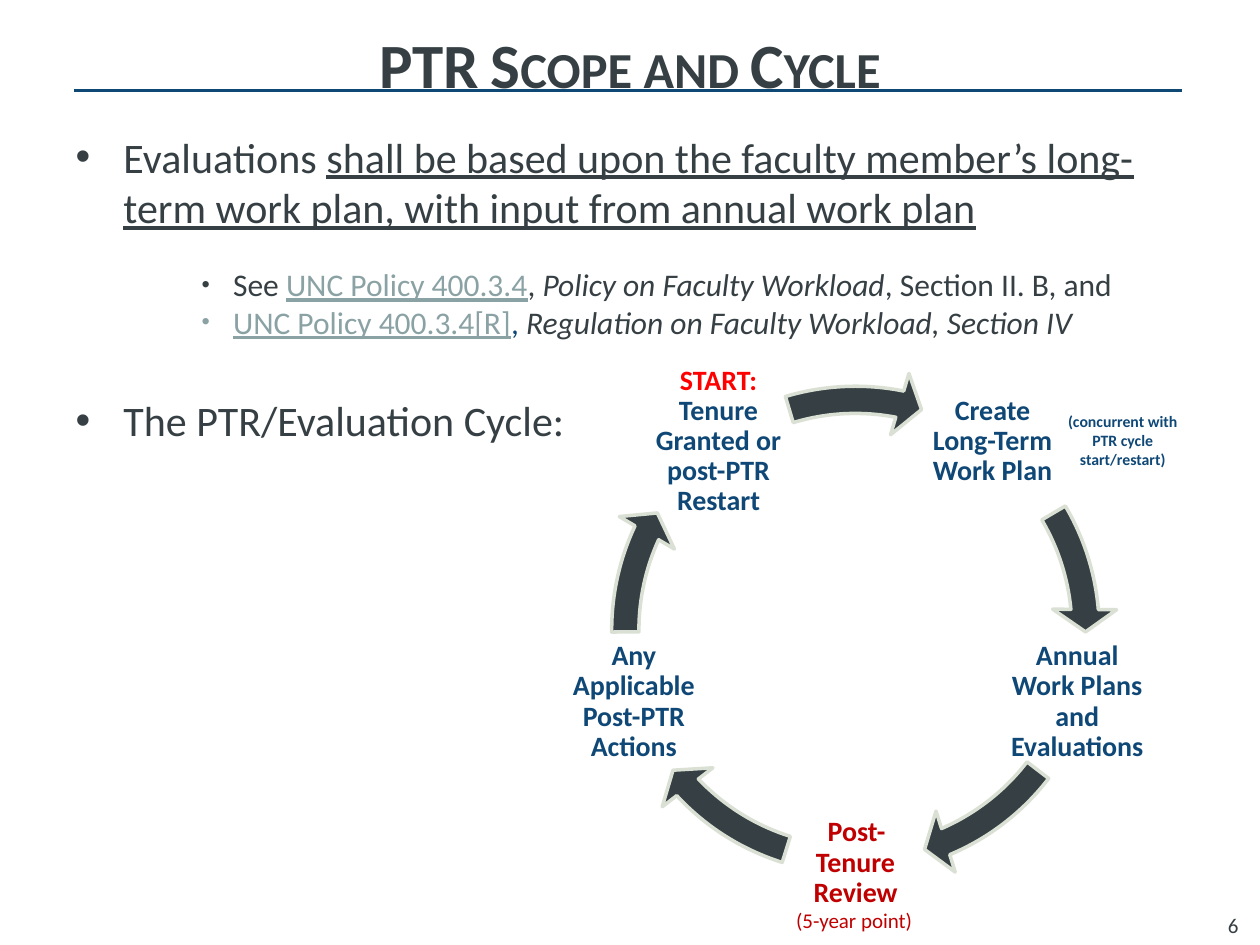
from math import cos, radians, sin

from lxml.etree import SubElement
from pptx import Presentation
from pptx.dml.color import RGBColor
from pptx.enum.shapes import MSO_CONNECTOR as Connector, MSO_SHAPE as Shape
from pptx.enum.text import MSO_ANCHOR as Anchor, MSO_AUTO_SIZE as AutoSize, PP_ALIGN as Align
from pptx.oxml.ns import qn
from pptx.util import Inches, Pt

SLATE, NAVY, RED, LINK = "364044", "0F4876", "C00000", "8BA2A5"
CENTER_X, CENTER_Y, RADIUS = 6.79, 5, 1.85
RING_SIZE, STEP_SIZE = 4.16, 1.11
FIRST_ANGLE = -126

STEPS = [
    [("START: ", "FF0000"), ("Tenure Granted or post-PTR Restart", NAVY)],
    [("Create Long-Term Work Plan", NAVY)],
    [("Annual Work Plans and Evaluations", NAVY)],
    [("Post-Tenure Review", RED)],
    [("Any Applicable Post-PTR Actions", NAVY)],
]
ARROW_ANGLES = [(253.3, 281.1), (329.43, 354.89), (37.55, 66.92),
                (107.49, 136.85), (179.51, 204.97)]


def color(hex_value):
    """Turn a hex string into a colour."""
    return RGBColor.from_string(hex_value)


def set_font(font, size, hex_value, bold=None):
    """Set the common font properties."""
    font.name = "Calibri"
    font.size = Pt(size)
    font.bold = bold
    font.color.rgb = color(hex_value)


def place(item, left, top, width, height):
    """Move and size a shape, in inches."""
    item.left, item.top = Inches(left), Inches(top)
    item.width, item.height = Inches(width), Inches(height)


def add_title(slide):
    """Fill the title and draw the rule under it."""
    title = slide.shapes.title
    place(title, 0.5, 0.1, 9, 0.81)
    heading = title.text_frame.paragraphs[0]
    heading.alignment = Align.CENTER
    run = heading.add_run()
    run.text = "PTR Scope and Cycle"
    set_font(run.font, 36, SLATE, True)
    run.font._element.set("cap", "small")

    rule = slide.shapes.add_connector(
        Connector.STRAIGHT, Inches(0.59), Inches(0.72), Inches(9.38), Inches(0.72))
    rule.line.color.rgb = color("0E4875")
    rule.line.width = Pt(2)
    SubElement(rule._element.spPr, qn("a:effectLst"))


def add_bullet(paragraph, parts, level, size, indent, hanging, before=0, after=0, percent=100):
    """Write one bulleted paragraph from (text, colour, underline, italic) parts."""
    properties = paragraph._p.get_or_add_pPr()
    properties.set("marL", str(Inches(indent)))
    properties.set("indent", str(-Inches(hanging)))
    SubElement(properties, qn("a:buSzPct"), val=str(percent * 1000))
    SubElement(properties, qn("a:buFont"), typeface="Arial")
    SubElement(properties, qn("a:buChar"), char="•")
    paragraph.level = level
    paragraph.space_before, paragraph.space_after = Pt(before), Pt(after)
    for text, hex_value, underline, italic in parts:
        run = paragraph.add_run()
        run.text = text
        set_font(run.font, size, hex_value)
        run.font.underline = underline
        run.font.italic = italic


def add_body(slide):
    """Fill the body with the evaluation rules and their sources."""
    body = slide.placeholders[1]
    place(body, 0.5, 0.99, 9, 3.35)
    frame = body.text_frame
    frame.auto_size = AutoSize.NONE
    main_style = dict(level=0, size=24, indent=0.38, hanging=0.38)
    source_style = dict(level=2, size=18, indent=1.25, hanging=0.25, percent=75)
    add_bullet(frame.paragraphs[0], [
        ("Evaluations ", SLATE, False, False),
        ("shall be based upon the faculty member’s long-term work plan, "
         "with input from annual work plan", SLATE, True, False),
    ], **main_style)
    add_bullet(frame.add_paragraph(), [
        ("See ", SLATE, False, False),
        ("UNC Policy 400.3.4", LINK, True, False),
        (", ", SLATE, False, False),
        ("Policy on Faculty Workload", SLATE, False, True),
        (", Section II. B, and", SLATE, False, False),
    ], before=19, **source_style)
    add_bullet(frame.add_paragraph(), [
        ("UNC Policy 400.3.4[R]", LINK, True, False),
        (", ", NAVY, False, False),
        ("Regulation on Faculty Workload, Section IV", SLATE, False, True),
    ], **source_style)
    add_bullet(frame.add_paragraph(), [
        ("The PTR/Evaluation Cycle:", SLATE, False, False),
    ], before=31, after=12, **main_style)


def add_text(slide, box, parts, size, bold=None, align=Align.CENTER, wrap=True, inset=None):
    """Add a text box of one paragraph from (text, colour) parts."""
    label = slide.shapes.add_textbox(*map(Inches, box))
    frame = label.text_frame
    frame.word_wrap = wrap
    if inset is not None:
        frame.margin_left = frame.margin_right = Inches(inset)
        frame.margin_top = frame.margin_bottom = Inches(inset)
    paragraph = frame.paragraphs[0]
    paragraph.alignment = align
    for text, hex_value in parts:
        run = paragraph.add_run()
        run.text = text
        set_font(run.font, size, hex_value, bold)
    return frame


def add_step(slide, parts, angle):
    """Add a step of the cycle at an angle on the ring."""
    left = CENTER_X + RADIUS * cos(radians(angle)) - STEP_SIZE / 2
    top = CENTER_Y + RADIUS * sin(radians(angle)) - STEP_SIZE / 2
    frame = add_text(slide, (left, top, STEP_SIZE, STEP_SIZE), parts, 16, True, inset=0.02)
    frame.vertical_anchor = Anchor.MIDDLE
    frame.paragraphs[0].line_spacing = 0.9


def add_arrow(slide, start, end):
    """Add a ring arrow between two angles in degrees."""
    ring_box = (CENTER_X - RING_SIZE / 2, CENTER_Y - RING_SIZE / 2, RING_SIZE, RING_SIZE)
    arrow = slide.shapes.add_shape(Shape.CIRCULAR_ARROW, *map(Inches, ring_box))
    arrow.shadow.inherit = False
    arrow.fill.solid()
    arrow.fill.fore_color.rgb = color(SLATE)
    arrow.line.color.rgb = color("DAE1D4")
    arrow.line.width = Pt(2)
    settings = (0.052, 3.358, end * 0.6, start * 0.6, 0.061)
    for index, value in enumerate(settings):
        arrow.adjustments[index] = value


def main():
    """Build and save the slide."""
    deck = Presentation()
    deck.slide_width, deck.slide_height = Inches(10), Inches(7.5)
    slide = deck.slides.add_slide(deck.slide_layouts[1])
    add_title(slide)
    add_body(slide)
    add_text(slide, (9.38, 7.24, 0.45, 0.22), [("6", SLATE)], 12,
             align=Align.RIGHT, wrap=False, inset=0)
    for index, (parts, angles) in enumerate(zip(STEPS, ARROW_ANGLES)):
        add_step(slide, parts, FIRST_ANGLE + index * 360 / len(STEPS))
        add_arrow(slide, *angles)
    add_text(slide, (8.32, 3.22, 1.18, 0.71),
             [("(concurrent with PTR cycle start/restart)", NAVY)], 9, True)
    add_text(slide, (6.22, 7.15, 1.17, 0.3), [("(5-year point)", RED)], 12,
             align=Align.LEFT, wrap=False)
    deck.save("out.pptx")


if __name__ == "__main__":
    main()
